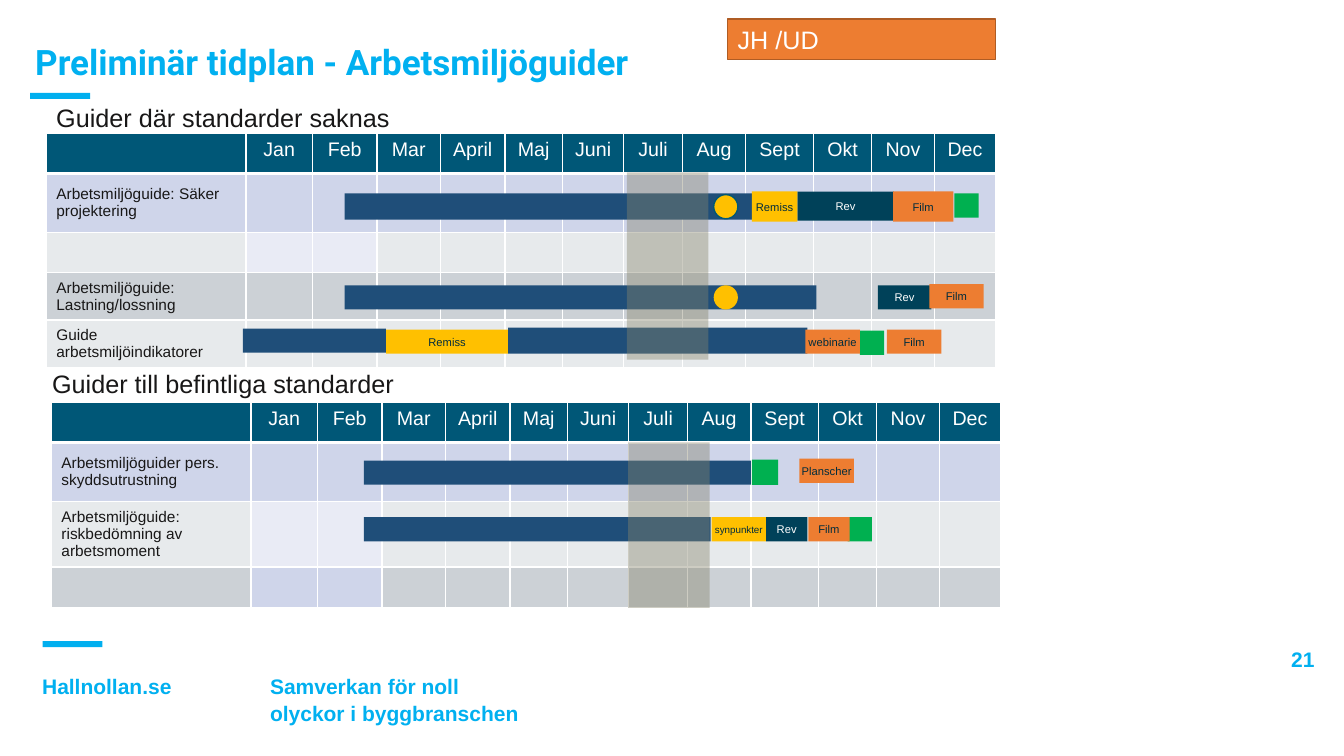
from lxml.etree import SubElement
from pptx import Presentation
from pptx.dml.color import RGBColor
from pptx.enum.shapes import MSO_SHAPE
from pptx.enum.text import MSO_ANCHOR, PP_ALIGN
from pptx.oxml.ns import qn
from pptx.util import Pt

COLORS = {
    "cyan": "01B0F0", "accent": "01AFEF", "header": "005777", "white": "FFFFFF",
    "text": "181717", "label": "002C3C", "work": "1F4E79", "yellow": "FFC000",
    "review": "004159", "green": "00B050", "orange": "ED7D31", "rust": "AF5C24",
    "holiday": "86846C", "lilac": "CFD5EA", "pale": "E9EBF5", "light": "E7EAEC",
    "grey": "CCD1D6",
}
MONTHS = ["Jan", "Feb", "Mar", "April", "Maj", "Juni", "Juli", "Aug", "Sept", "Okt", "Nov", "Dec"]
COLUMNS = [142.6, 47.5, 46.1, 45.4, 46.1, 41, 43.9, 41.8, 45.4, 48.2, 41.8, 44.6, 43.9]


class Timeline:
    def __init__(self, slide, font="Arial"):
        self.slide = slide
        self.font = font

    def color(self, name):
        return RGBColor.from_string(COLORS[name])

    def fill_frame(self, frame, text, size, color, bold=False, align=PP_ALIGN.LEFT,
                   font=None, spacing=None):
        for index, line in enumerate(text.split("\n")):
            paragraph = frame.add_paragraph() if index else frame.paragraphs[0]
            paragraph.text = line
            paragraph.alignment = align
            paragraph.line_spacing = spacing
            paragraph.font.name = font or self.font
            paragraph.font.size = Pt(size)
            paragraph.font.bold = bold
            paragraph.font.color.rgb = self.color(color)

    def text(self, box, text, size, color, anchor=MSO_ANCHOR.TOP, inset=7.2, **style):
        frame = self.slide.shapes.add_textbox(*map(Pt, box)).text_frame
        frame.word_wrap = True
        frame.vertical_anchor = anchor
        frame.margin_left = Pt(inset)
        self.fill_frame(frame, text, size, color, **style)

    def shape(self, box, fill, line=None, kind=MSO_SHAPE.RECTANGLE, alpha=None):
        shape = self.slide.shapes.add_shape(kind, *map(Pt, box))
        shape.shadow.inherit = False
        shape.fill.solid()
        shape.fill.fore_color.rgb = self.color(fill)
        if alpha:
            color = shape._element.spPr.find(qn("a:solidFill"))[0]
            SubElement(color, qn("a:alpha"), val=str(alpha * 1000))
        if line:
            shape.line.color.rgb = self.color(line)
            shape.line.width = Pt(1)
        else:
            shape.line.fill.background()
        return shape

    def bar(self, left, top, width, height, fill, label="", size=8):
        frame = self.shape((left, top, width, height), fill).text_frame
        if label:
            frame.word_wrap = True
            frame.vertical_anchor = MSO_ANCHOR.MIDDLE
            frame.margin_left = frame.margin_right = 0
            color = "white" if fill == "review" else "label"
            self.fill_frame(frame, label, size, color, align=PP_ALIGN.CENTER)

    def dot(self, top, line=None):
        self.shape((509.8, top, 17.3, 17.3), "yellow", line, MSO_SHAPE.OVAL)

    def cell(self, cell, fill, bottom=1):
        properties = cell._tc.get_or_add_tcPr()
        for side in "LRTB":
            width = Pt(bottom if side == "B" else 1)
            border = SubElement(properties, qn(f"a:ln{side}"), w=str(int(width)))
            solid = SubElement(border, qn("a:solidFill"))
            SubElement(solid, qn("a:srgbClr"), val=COLORS["white"])
        cell.fill.solid()
        cell.fill.fore_color.rgb = self.color(fill)

    def table(self, left, top, rows):
        """Each row holds guide name, height, row fill and Jan-Feb fill."""
        height = 28.8 + sum(row[1] for row in rows)
        table = self.slide.shapes.add_table(
            len(rows) + 1, len(COLUMNS), Pt(left), Pt(top),
            Pt(sum(COLUMNS)), Pt(height)).table
        for column, width in zip(table.columns, COLUMNS):
            column.width = Pt(width)
        table.rows[0].height = Pt(28.8)
        for index, month in enumerate([""] + MONTHS):
            cell = table.cell(0, index)
            self.cell(cell, "header", bottom=3)
            if month:
                self.fill_frame(cell.text_frame, month, 14, "white", align=PP_ALIGN.CENTER)
        for number, (guide, row_height, fill, early_fill) in enumerate(rows, 1):
            table.rows[number].height = Pt(row_height)
            for index in range(len(COLUMNS)):
                self.cell(table.cell(number, index), early_fill if index in (1, 2) else fill)
            if guide:
                cell = table.cell(number, 0)
                cell.vertical_anchor = MSO_ANCHOR.MIDDLE
                self.fill_frame(cell.text_frame, guide, 11, "text")


def main():
    presentation = Presentation()
    presentation.slide_width, presentation.slide_height = Pt(960), Pt(540)
    slide = presentation.slides.add_slide(presentation.slide_layouts[6])
    timeline = Timeline(slide)

    # Footer and accent lines
    footer = dict(size=15, color="cyan", bold=True, spacing=Pt(19))
    timeline.text((185.8, 476.6, 253.4, 45.4), "Samverkan för noll\nolyckor i byggbranschen", **footer)
    timeline.text((23, 476.6, 253.4, 25.2), "Hallnollan.se", **footer)
    timeline.text((692.6, 457.2, 253.4, 25.2), "21", align=PP_ALIGN.RIGHT, **footer)
    timeline.shape((30.4, 458, 42.8, 4.3), "accent")
    timeline.shape((21.6, 66.4, 42.8, 4.3), "accent")

    # Title and responsible persons
    timeline.text((25.2, 19.4, 828, 43.2), "Preliminär tidplan - Arbetsmiljöguider", 25, "cyan",
                  anchor=MSO_ANCHOR.BOTTOM, inset=0, bold=True, font="Roboto", spacing=0.9)
    owner = timeline.shape((519.8, 13.7, 191.5, 28.8), "orange", "rust").text_frame
    owner.vertical_anchor = MSO_ANCHOR.TOP
    timeline.fill_frame(owner, "JH /UD", 18, "white")

    # Guides without standards
    timeline.text((33.1, 69.8, 307.4, 28.8), "Guider där standarder saknas", 18, "text")
    timeline.table(33.1, 95.2, [
        ("Arbetsmiljöguide: Säker projektering", 42, "lilac", "lilac"),
        ("", 28.8, "light", "pale"),
        ("Arbetsmiljöguide: Lastning/lossning", 33.8, "grey", "grey"),
        ("Guide arbetsmiljöindikatorer", 32.9, "light", "light"),
    ])
    for bar in [
        (246.2, 138.2, 301, 18.7, "work"),
        (569.5, 136.8, 69.1, 20.9, "review", "Rev"),
        (537.1, 136.8, 32.4, 21.6, "yellow", "Remiss"),
        (681.8, 138.2, 17.3, 17.3, "green"),
        (637.9, 136.8, 43.2, 21.6, "orange", "Film"),
        (246.2, 203.8, 337, 17.3, "work"),
        (627.1, 203.8, 38.2, 17.3, "review", "Rev"),
        (663.8, 203, 38.9, 17.3, "orange", "Film"),
        (173.5, 234.7, 102.2, 17.3, "work"),
        (275.8, 235.4, 87.1, 17.3, "yellow", "Remiss"),
        (362.9, 234, 213.8, 18.7, "work"),
        (614.2, 236.2, 17.3, 17.3, "green"),
        (575.3, 235.4, 38.9, 17.3, "orange", "webinarie"),
        (633.6, 235.4, 38.9, 17.3, "orange", "Film"),
    ]:
        timeline.bar(*bar)
    timeline.dot(139, "header")
    timeline.dot(203.8)
    timeline.shape((447.8, 123.1, 58.3, 133.9), "holiday", alpha=41)

    # Guides to existing standards
    timeline.text((30.2, 259.9, 307.4, 28.8), "Guider till befintliga standarder", 18, "text")
    timeline.table(36.7, 287.3, [
        ("Arbetsmiljöguider pers. skyddsutrustning", 42, "lilac", "lilac"),
        ("Arbetsmiljöguide: riskbedömning av arbetsmoment", 46.4, "light", "pale"),
        ("", 28.8, "grey", "lilac"),
    ])
    for bar in [
        (259.9, 329, 276.5, 17.3, "work"),
        (537.1, 328.3, 18.7, 18, "green"),
        (571, 327.6, 38.9, 17.3, "orange", "Planscher"),
        (259.9, 369.4, 247.7, 17.3, "work"),
        (605.5, 369.4, 17.3, 17.3, "green"),
        (508.3, 369.4, 38.9, 17.3, "yellow", "synpunkter", 7),
        (547.2, 369.4, 29.5, 17.3, "review", "Rev"),
        (577.4, 369.4, 29.5, 17.3, "orange", "Film"),
    ]:
        timeline.bar(*bar)
    timeline.shape((448.6, 316.1, 58.3, 118.1), "holiday", alpha=41)

    presentation.save("out.pptx")


if __name__ == "__main__":
    main()
